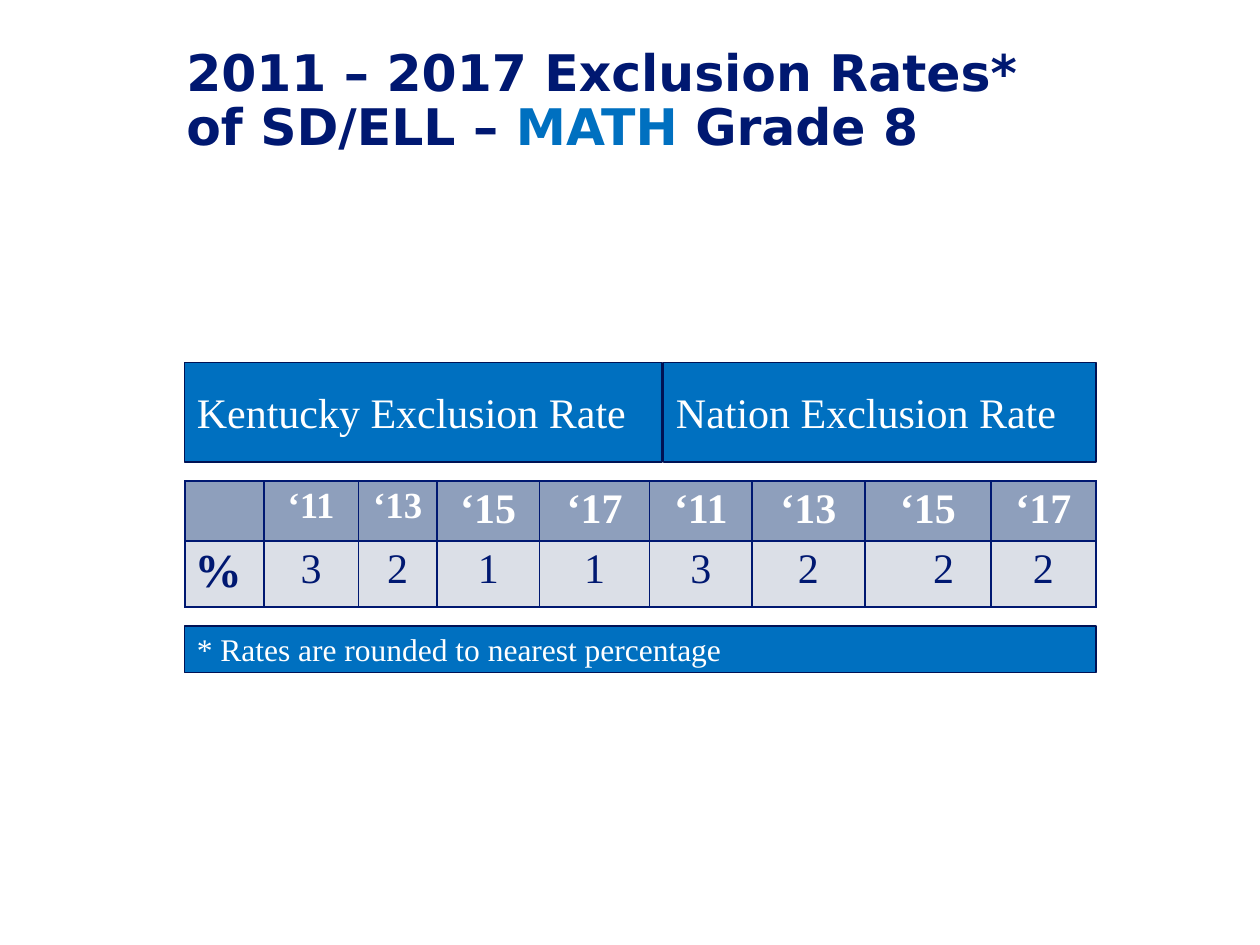
from lxml import etree
from pptx import Presentation
from pptx import util as u
from pptx.dml.color import RGBColor
from pptx.enum import shapes, text
from pptx.oxml import ns

NAVY, EDGE, BLUE, WHITE = "001871", "001255", "0070C0", "FFFFFF"
HEADER_FILL, BODY_FILL = "8E9FBC", "DBDFE7"
SERIF, SANS = "Times New Roman", "DejaVu Sans"
CENTER = text.PP_ALIGN.CENTER

YEARS = ["‘11", "‘13", "‘15", "‘17"]
RATES = ["3", "2", "1", "1", "3", "2", "2", "2"]
COLUMN_WIDTHS = [45, 54, 45, 58.5, 63, 58.5, 64.5, 72, 60]
ROW_HEIGHTS = [34.2, 37.6]
SHIFTED_COLUMN = 7  # its rate stands right of the centre


def color(value):
    return RGBColor.from_string(value)


def add_text(para, words, size=24, font=SERIF, fill=WHITE, bold=False,
             align=text.PP_ALIGN.LEFT):
    para.alignment = align
    span = para.add_run()
    span.text = words
    span.font.size = u.Pt(size)
    span.font.name = font
    span.font.bold = bold
    span.font.color.rgb = color(fill)


def add_bar(page, left, top, width, height, words, size=24):
    bar = page.shapes.add_shape(shapes.MSO_SHAPE.RECTANGLE, u.Pt(left),
                                u.Pt(top), u.Pt(width), u.Pt(height))
    bar.shadow.inherit = False
    bar.fill.solid()
    bar.fill.fore_color.rgb = color(BLUE)
    bar.line.color.rgb = color(EDGE)
    bar.line.width = u.Pt(1)
    frame = bar.text_frame
    frame.word_wrap = True
    frame.vertical_anchor = text.MSO_ANCHOR.MIDDLE
    add_text(frame.paragraphs[0], words, size)


def add_borders(cell):
    properties = cell._tc.get_or_add_tcPr()
    for index, side in enumerate(("lnL", "lnR", "lnT", "lnB")):
        line = etree.Element(ns.qn(f"a:{side}"), w=str(int(u.Pt(1))))
        fill = etree.SubElement(line, ns.qn("a:solidFill"))
        etree.SubElement(fill, ns.qn("a:srgbClr"), val=NAVY)
        properties.insert(index, line)


def fill_cell(cell, words, background, **style):
    cell.margin_left = cell.margin_right = u.Pt(5.4)
    cell.margin_top = cell.margin_bottom = u.Pt(2.7)
    cell.fill.solid()
    cell.fill.fore_color.rgb = color(background)
    add_borders(cell)
    if words:
        add_text(cell.text_frame.paragraphs[0], words, **style)


def add_rate_table(page, left, top):
    table = page.shapes.add_table(
        len(ROW_HEIGHTS), len(COLUMN_WIDTHS), u.Pt(left), u.Pt(top),
        u.Pt(sum(COLUMN_WIDTHS)), u.Pt(sum(ROW_HEIGHTS))).table
    for column, width in zip(table.columns, COLUMN_WIDTHS):
        column.width = u.Pt(width)
    for row, height in zip(table.rows, ROW_HEIGHTS):
        row.height = u.Pt(height)

    # Row labels
    fill_cell(table.cell(0, 0), "", HEADER_FILL)
    fill_cell(table.cell(1, 0), "%", BODY_FILL, size=27, fill=NAVY, bold=True)

    # Years and rates: Kentucky first, then the nation
    for index, (year, rate) in enumerate(zip(YEARS * 2, RATES), start=1):
        fill_cell(table.cell(0, index), year, HEADER_FILL,
                  size=21 if index < 3 else 24, bold=True, align=CENTER)
        fill_cell(table.cell(1, index), rate, BODY_FILL, fill=NAVY, align=CENTER)
    table.cell(1, SHIFTED_COLUMN).margin_left = u.Pt(23.4)


def add_title(page, left, top, width, height, parts):
    box = page.shapes.add_textbox(u.Pt(left), u.Pt(top), u.Pt(width), u.Pt(height))
    frame = box.text_frame
    frame.word_wrap = True
    frame.vertical_anchor = text.MSO_ANCHOR.MIDDLE
    para = frame.paragraphs[0]
    para.line_spacing = 0.9
    for words, fill in parts:
        add_text(para, words, 28.8, SANS, fill, bold=True)


def main():
    deck = Presentation()
    deck.slide_width, deck.slide_height = u.Pt(720), u.Pt(540)
    page = deck.slides.add_slide(deck.slide_layouts[6])

    # Table with its heading bars and footnote
    add_rate_table(page, 105.8, 275)
    add_bar(page, 105.4, 207.2, 273, 56.6, "Kentucky Exclusion Rate")
    add_bar(page, 379.2, 207.2, 247, 56.6, "Nation Exclusion Rate")
    add_bar(page, 105.4, 357.8, 520.8, 26.6,
            "* Rates are rounded to nearest percentage", size=18)

    # Title
    add_title(page, 99.4, 20.2, 518.4, 76.3, [
        ("2011 – 2017 Exclusion Rates* of SD/ELL – ", NAVY),
        ("MATH ", BLUE),
        ("Grade 8", NAVY),
    ])
    deck.save("out.pptx")


if __name__ == "__main__":
    main()
